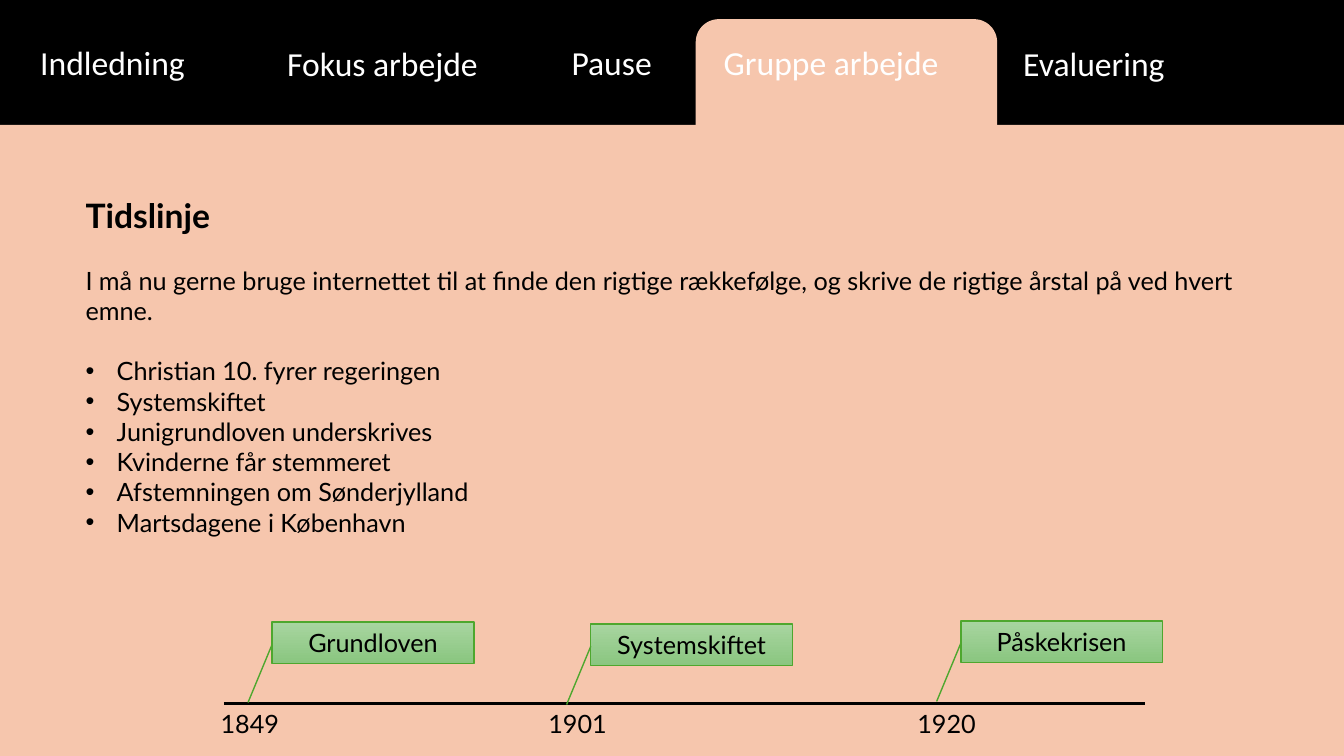
from dataclasses import dataclass

import lxml.etree
import pptx
import pptx.dml.color
import pptx.enum.shapes
import pptx.enum.text
import pptx.oxml.ns
import pptx.util

PX = 9144  # EMU per px, 100 px to the inch
WIDTH, HEIGHT = 1333, 750
BLACK, WHITE, PEACH, GREEN = "000000", "FFFFFF", "F6C6AD", "4EA72E"
GRADIENT = ("A8D5A0", "8AC680")
SHAPES = pptx.enum.shapes.MSO_SHAPE
CENTER = pptx.enum.text.PP_ALIGN.CENTER


@dataclass
class Tab:
    text: str
    left: int
    top: int
    width: int


@dataclass
class Event:
    text: str
    left: int
    top: int
    year: str
    year_left: int


TABS = [
    Tab("Indledning", 30, 37, 215),
    Tab("Fokus arbejde", 275, 38, 252),
    Tab("Pause", 557, 37, 121),
    Tab("Gruppe arbejde", 708, 37, 267),
    Tab("Evaluering", 1005, 38, 215),
]
EVENTS = [
    Event("Grundloven", 270, 617, "1849", 209),
    Event("Systemskiftet", 586, 619, "1901", 534),
    Event("Påskekrisen", 953, 616, "1920", 900),
]
TASK = (
    "I må nu gerne bruge internettet til at finde den rigtige rækkefølge, "
    "og skrive de rigtige årstal på ved hvert emne."
)
TOPICS = [
    "Christian 10. fyrer regeringen",
    "Systemskiftet",
    "Junigrundloven underskrives",
    "Kvinderne får stemmeret",
    "Afstemningen om Sønderjylland",
    "Martsdagene i København",
]


def color(value: str) -> pptx.dml.color.RGBColor:
    return pptx.dml.color.RGBColor.from_string(value)


def place(left: int, top: int, width: int, height: int) -> list[int]:
    """Turn px lengths into EMU."""
    return [length * PX for length in (left, top, width, height)]


def add_bullet(para) -> None:
    properties = para._p.get_or_add_pPr()
    properties.set("marL", str(31 * PX))
    properties.set("indent", str(-31 * PX))
    for tag, name, value in (("a:buFont", "typeface", "Arial"), ("a:buChar", "char", "•")):
        bullet = lxml.etree.SubElement(properties, pptx.oxml.ns.qn(tag))
        bullet.set(name, value)


def write(frame, text: str, *, size: int = 18, font: str = "Lato", ink: str = BLACK,
          bold: bool = False, align=None, before: float = 0, bullet: bool = False) -> None:
    """Write text in the frame's empty first paragraph, or in a new one."""
    first = frame.paragraphs[0]
    para = frame.add_paragraph() if first.runs else first
    if before:
        para.space_before = pptx.util.Pt(before)
    if align is not None:
        para.alignment = align
    if bullet:
        add_bullet(para)
    span = para.add_run()
    span.text = text
    span.font.size = pptx.util.Pt(size)
    span.font.name = font
    span.font.bold = bold
    span.font.color.rgb = color(ink)


def add_text_frame(page, left: int, top: int, width: int, height: int):
    box = page.shapes.add_textbox(*place(left, top, width, height))
    box.text_frame.word_wrap = True
    box.text_frame.auto_size = pptx.enum.text.MSO_AUTO_SIZE.SHAPE_TO_FIT_TEXT
    return box.text_frame


def add_panel(page, kind, left: int, top: int, width: int, height: int) -> None:
    panel = page.shapes.add_shape(kind, *place(left, top, width, height))
    panel.shadow.inherit = False
    panel.fill.solid()
    panel.fill.fore_color.rgb = color(PEACH)
    panel.line.fill.background()


def add_assignment(page) -> None:
    frame = add_text_frame(page, 75, 188, 1183, 323)
    write(frame, "Tidslinje", size=24, bold=True)
    write(frame, TASK, before=21.6)
    for index, topic in enumerate(TOPICS):
        write(frame, topic, bullet=True, before=0 if index else 21.6)


def add_axis(page) -> None:
    axis = page.shapes.add_connector(
        pptx.enum.shapes.MSO_CONNECTOR.STRAIGHT, *place(222, 698, 1136, 698))
    axis.line.color.rgb = color(BLACK)
    axis.line.width = pptx.util.Pt(2)
    lxml.etree.SubElement(axis._element.spPr, pptx.oxml.ns.qn("a:effectLst"))


def add_event(page, event: Event) -> None:
    callout = page.shapes.add_shape(
        SHAPES.LINE_CALLOUT_1, *place(event.left, event.top, 200, 41))
    for index, value in enumerate((0.54, 0, 1.95, -0.12)):
        callout.adjustments[index] = value
    callout.shadow.inherit = False
    callout.fill.gradient()
    callout.fill.gradient_angle = 270
    for stop, shade in zip(callout.fill.gradient_stops, GRADIENT):
        stop.color.rgb = color(shade)
    callout.line.color.rgb = color(GREEN)
    callout.line.width = pptx.util.Pt(1)
    callout.text_frame.vertical_anchor = pptx.enum.text.MSO_ANCHOR.MIDDLE
    write(callout.text_frame, event.text, align=CENTER)
    write(add_text_frame(page, event.year_left, 698, 100, 32), event.year)


def main() -> None:
    deck = pptx.Presentation()
    deck.slide_width, deck.slide_height = WIDTH * PX, HEIGHT * PX
    page = deck.slides.add_slide(deck.slide_layouts[6])
    page.background.fill.solid()
    page.background.fill.fore_color.rgb = color(BLACK)

    add_panel(page, SHAPES.ROUNDED_RECTANGLE, 690, 19, 299, 137)
    add_panel(page, SHAPES.RECTANGLE, 0, 124, WIDTH, HEIGHT - 124)
    for tab in TABS:
        frame = add_text_frame(page, tab.left, tab.top, tab.width, 50)
        write(frame, tab.text, size=24, font="Calibri", ink=WHITE)
    add_assignment(page)
    add_axis(page)
    for event in EVENTS:
        add_event(page, event)
    deck.save("out.pptx")


if __name__ == "__main__":
    main()
